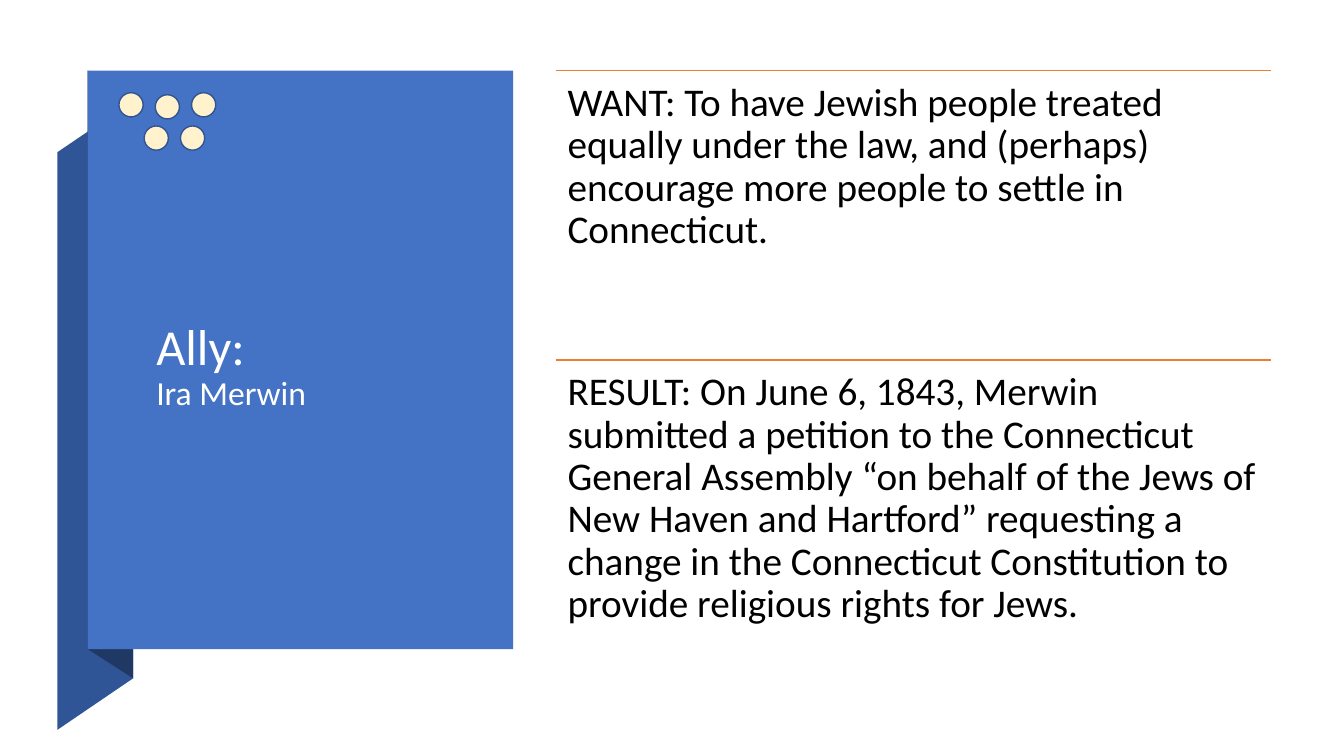
from lxml.etree import SubElement
from pptx import Presentation
from pptx.dml.color import RGBColor
from pptx.enum.shapes import MSO_CONNECTOR, MSO_SHAPE
from pptx.enum.text import MSO_ANCHOR, MSO_AUTO_SIZE, PP_ALIGN
from pptx.oxml.ns import qn
from pptx.util import Inches, Pt

BLUE = RGBColor(0x44, 0x72, 0xC4)
SIDE = RGBColor(0x2F, 0x55, 0x97)
FOLD = RGBColor(0x20, 0x38, 0x64)
ORANGE = RGBColor(0xED, 0x7D, 0x31)
CREAM = RGBColor(0xFF, 0xF2, 0xCC)
RIM = RGBColor(0x32, 0x54, 0x91)
WHITE = RGBColor(0xFF, 0xFF, 0xFF)
BLACK = RGBColor(0, 0, 0)
FONT = "Calibri"

WANT = ("WANT: To have Jewish people treated equally under the law, and "
        "(perhaps) encourage more people to settle in Connecticut.")
RESULT = ("RESULT: On June 6, 1843, Merwin submitted a petition to the "
          "Connecticut General Assembly “on behalf of the Jews of New Haven "
          "and Hartford” requesting a change in the Connecticut Constitution "
          "to provide religious rights for Jews.")


def paint(shape, color):
    shape.shadow.inherit = False
    shape.fill.solid()
    shape.fill.fore_color.rgb = color
    shape.line.fill.background()


def add_run(para, text, size, color):
    run = para.add_run()
    run.text = text
    run.font.name = FONT
    run.font.size = Pt(size)
    run.font.color.rgb = color


def add_outline(slide, points, color):
    first, *rest = [(Inches(x), Inches(y)) for x, y in points]
    builder = slide.shapes.build_freeform(*first)
    builder.add_line_segments(rest, close=True)
    paint(builder.convert_to_shape(), color)


def add_banner(slide, left, top, width, height):
    """Draw the blue panel with the ribbon that folds behind it."""
    outer, inner = left - 0.3, left + 0.45
    base = top + height
    add_outline(slide, [(outer, base + 0.8), (inner, base + 0.29),
                        (inner, top + 0.3), (outer, top + 0.81)], SIDE)
    add_outline(slide, [(left, base), (inner, base + 0.29),
                        (inner, top + 0.29), (left, top)], FOLD)
    panel = slide.shapes.add_shape(
        MSO_SHAPE.RECTANGLE, Inches(left), Inches(top),
        Inches(width), Inches(height))
    paint(panel, BLUE)


def add_title(slide, left, top, width, height):
    title = slide.shapes.title
    title.left, title.top = Inches(left), Inches(top)
    title.width, title.height = Inches(width), Inches(height)
    # Bring the title in front of the panel
    title.element.getparent().append(title.element)
    frame = title.text_frame
    frame.word_wrap = True
    frame.auto_size = MSO_AUTO_SIZE.NONE
    frame.vertical_anchor = MSO_ANCHOR.MIDDLE
    para = frame.paragraphs[0]
    para.alignment = PP_ALIGN.LEFT
    para.line_spacing = 0.9
    add_run(para, "Ally:", 36, WHITE)
    para.add_line_break()
    add_run(para, "Ira Merwin", 24, WHITE)


def add_point(slide, text, left, top, width, height):
    """Place a text under an orange rule."""
    rule = slide.shapes.add_connector(
        MSO_CONNECTOR.STRAIGHT, Inches(left), Inches(top),
        Inches(left + width), Inches(top))
    rule.line.color.rgb = ORANGE
    rule.line.width = Pt(1)
    SubElement(rule.element.spPr, qn("a:effectLst"))
    box = slide.shapes.add_textbox(
        Inches(left), Inches(top), Inches(width), Inches(height))
    frame = box.text_frame
    frame.word_wrap = True
    frame.margin_left = frame.margin_right = Inches(0.12)
    frame.margin_top = frame.margin_bottom = Inches(0.12)
    para = frame.paragraphs[0]
    para.line_spacing = 0.9
    add_run(para, text, 28, BLACK)


def add_dots(slide, left, top):
    """Place two dots below a row of three."""
    size, step = 0.24, 0.36
    spots = [(0.25, 0.33), (0.25 + step, 0.33),
             (0, 0), (step, 0.02), (2 * step, 0)]
    for x, y in spots:
        dot = slide.shapes.add_shape(
            MSO_SHAPE.OVAL, Inches(left + x), Inches(top + y),
            Inches(size), Inches(size))
        paint(dot, CREAM)
        dot.line.color.rgb = RIM
        dot.line.width = Pt(1)


def main():
    deck = Presentation()
    deck.slide_width, deck.slide_height = Inches(13.33), Inches(7.5)
    slide = deck.slides.add_slide(deck.slide_layouts[5])
    add_banner(slide, 0.87, 0.7, 4.22, 5.74)
    add_title(slide, 1.45, 1.67, 3.01, 3.94)
    top, height = 0.7, 2.87
    for row, text in enumerate((WANT, RESULT)):
        add_point(slide, text, 5.51, top + row * height, 7.1, height)
    add_dots(slide, 1.18, 0.92)
    deck.save("out.pptx")


if __name__ == "__main__":
    main()
